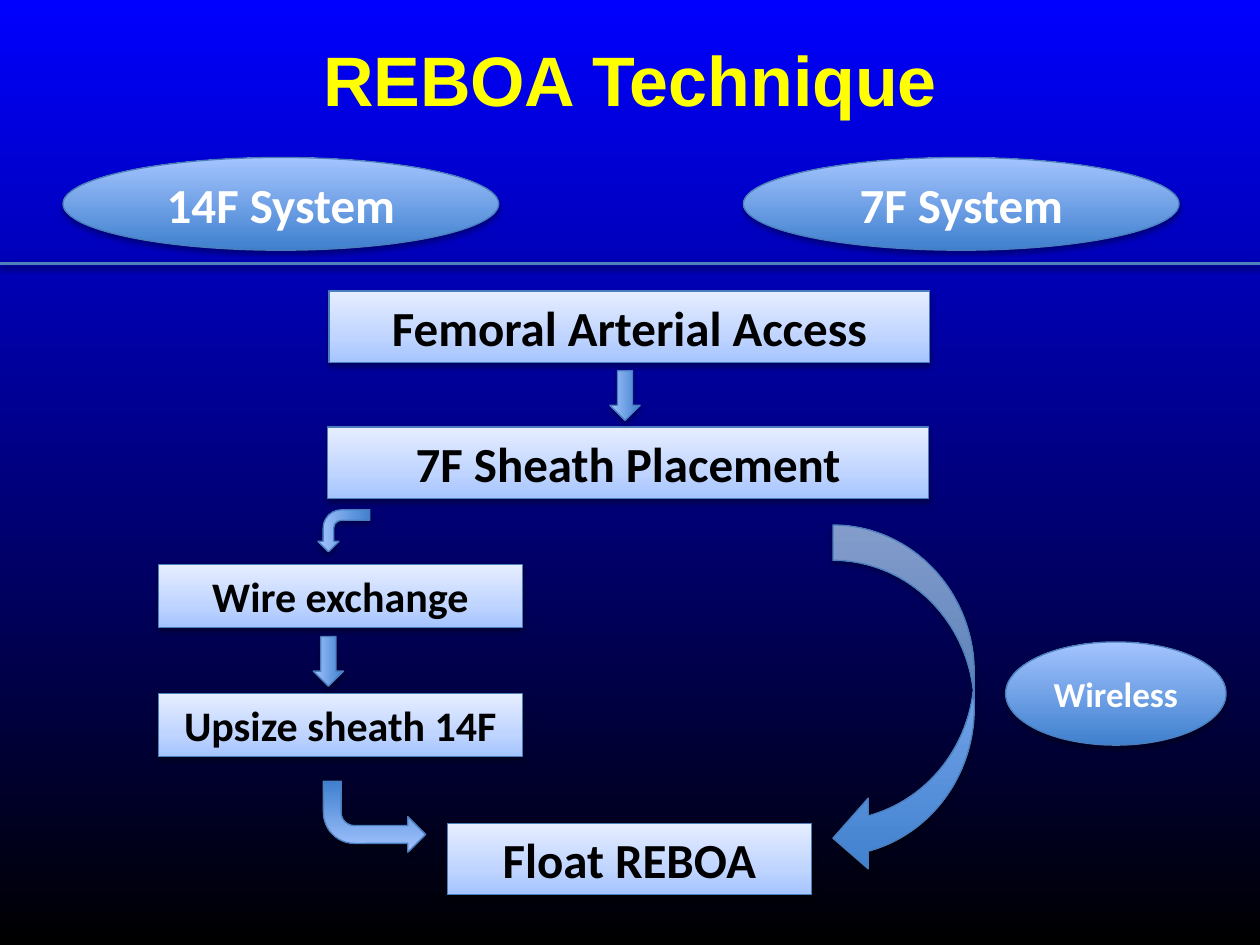
from copy import deepcopy
from dataclasses import dataclass

from lxml.etree import SubElement
from pptx import Presentation
from pptx.dml.color import RGBColor
from pptx.enum.shapes import MSO_CONNECTOR, MSO_SHAPE as Preset
from pptx.enum.text import MSO_ANCHOR as Anchor, MSO_AUTO_SIZE as AutoSize, PP_ALIGN as Align
from pptx.oxml.ns import qn
from pptx.util import Pt


@dataclass(frozen=True)
class Theme:
    title_font: str = "Arial"
    body_font: str = "Calibri"
    title_size: int = 40
    large: int = 28
    medium: int = 24
    small: int = 20
    title_color: str = "FFFF00"
    light_text: str = "FFFFFF"
    dark_text: str = "000000"
    outline: str = "4B7EBC"
    divider: str = "4F81BD"
    background: tuple = ((0, "0000FF"), (1, "000000"))
    pale: tuple = ((0, "A4C4FF"), (0.35, "BFD4FF"), (1, "E6EEFF"))
    strong: tuple = ((0, "3F80CE"), (1, "A4C4FF"))
    pale_shadow: tuple = (38, 1.6)
    strong_shadow: tuple = (35, 1.8)


THEME = Theme()
SLIDE_SIZE = (720, 540)
TITLE = "REBOA Technique"
DIVIDER_TOP = 150.5

# text, type size, (left, top, width, height)
STEPS = [
    ("Femoral Arterial Access", THEME.large, (188, 166.3, 343.4, 41)),
    ("7F Sheath Placement", THEME.large, (187.2, 244.1, 343.4, 41)),
    ("Wire exchange", THEME.medium, (90.5, 322.5, 208, 36.2)),
    ("Upsize sheath 14F", THEME.medium, (90.5, 396.2, 208, 36.2)),
    ("Float REBOA", THEME.large, (255.6, 470.4, 208, 41)),
]
SYSTEMS = [
    ("14F System", THEME.large, (36, 90, 249, 53)),
    ("7F System", THEME.large, (424.8, 90, 249, 53)),
    ("Wireless", THEME.small, (574.6, 366.8, 126, 59)),
]
# preset, (left, top, width, height), rotation, flipped
ARROWS = [
    (Preset.CURVED_LEFT_ARROW, (476, 300, 80.8, 199.2), 0, False),
    (Preset.LEFT_ARROW, (343, 217.4, 28.4, 17.3), 270, False),
    (Preset.LEFT_ARROW, (173.5, 369.3, 28.4, 17.3), 270, False),
    (Preset.BENT_ARROW, (184.5, 288.5, 24, 29.6), 270, True),
    (Preset.BENT_ARROW, (184.8, 446.4, 58.4, 40.6), 180, True),
]


def color(value):
    return RGBColor.from_string(value)


def points(*values):
    return [Pt(value) for value in values]


def add_gradient(fill, element, colors, angle):
    """Fill with (position, colour) stops; the angle runs counter-clockwise."""
    fill.gradient()
    fill.gradient_angle = angle
    stop_list = element.find(".//" + qn("a:gsLst"))
    for _ in colors[2:]:
        stop_list.append(deepcopy(stop_list[-1]))
    for stop, (position, value) in zip(fill.gradient_stops, colors):
        stop.position = position
        stop.color.rgb = color(value)


def add_shadow(element, opacity, distance):
    effects = SubElement(element.spPr, qn("a:effectLst"))
    shadow = SubElement(effects, qn("a:outerShdw"), blurRad=str(Pt(3.15)),
                        dist=str(Pt(distance)), dir="5400000", rotWithShape="0")
    black = SubElement(shadow, qn("a:srgbClr"), val="000000")
    SubElement(black, qn("a:alpha"), val=str(opacity * 1000))


def write(shape, text, *, size, ink, font=THEME.body_font, anchor=Anchor.MIDDLE):
    frame = shape.text_frame
    frame.word_wrap = True
    frame.vertical_anchor = anchor
    paragraph = frame.paragraphs[0]
    paragraph.alignment = Align.CENTER
    run = paragraph.add_run()
    run.text = text
    run.font.name = font
    run.font.size = Pt(size)
    run.font.bold = True
    run.font.color.rgb = color(ink)


def add_block(slide, preset, box, colors, shadow):
    shape = slide.shapes.add_shape(preset, *points(*box))
    add_gradient(shape.fill, shape._element, colors, 90)
    shape.line.color.rgb = color(THEME.outline)
    shape.line.width = Pt(0.75)
    add_shadow(shape._element, *shadow)
    return shape


def add_divider(slide):
    line = slide.shapes.add_connector(
        MSO_CONNECTOR.STRAIGHT, *points(0, DIVIDER_TOP, SLIDE_SIZE[0], DIVIDER_TOP))
    line.line.color.rgb = color(THEME.divider)
    line.line.width = Pt(2)
    add_shadow(line._element, *THEME.pale_shadow)


def main():
    presentation = Presentation()
    presentation.slide_width, presentation.slide_height = points(*SLIDE_SIZE)
    slide = presentation.slides.add_slide(presentation.slide_layouts[6])
    add_gradient(slide.background.fill, slide._element, THEME.background, 270)

    title = slide.shapes.add_textbox(*points(36, 0, 648, 90))
    write(title, TITLE, size=THEME.title_size, ink=THEME.title_color, font=THEME.title_font)

    for text, size, box in STEPS:
        step = add_block(slide, Preset.RECTANGLE, box, THEME.pale, THEME.pale_shadow)
        write(step, text, size=size, ink=THEME.dark_text, anchor=Anchor.TOP)
        step.text_frame.auto_size = AutoSize.SHAPE_TO_FIT_TEXT

    for text, size, box in SYSTEMS:
        system = add_block(slide, Preset.OVAL, box, THEME.strong, THEME.strong_shadow)
        write(system, text, size=size, ink=THEME.light_text)

    add_divider(slide)

    for preset, box, rotation, flipped in ARROWS:
        arrow = add_block(slide, preset, box, THEME.strong, THEME.strong_shadow)
        arrow.rotation = rotation
        if flipped:
            arrow._element.spPr.xfrm.set("flipH", "1")

    presentation.save("out.pptx")


if __name__ == "__main__":
    main()
